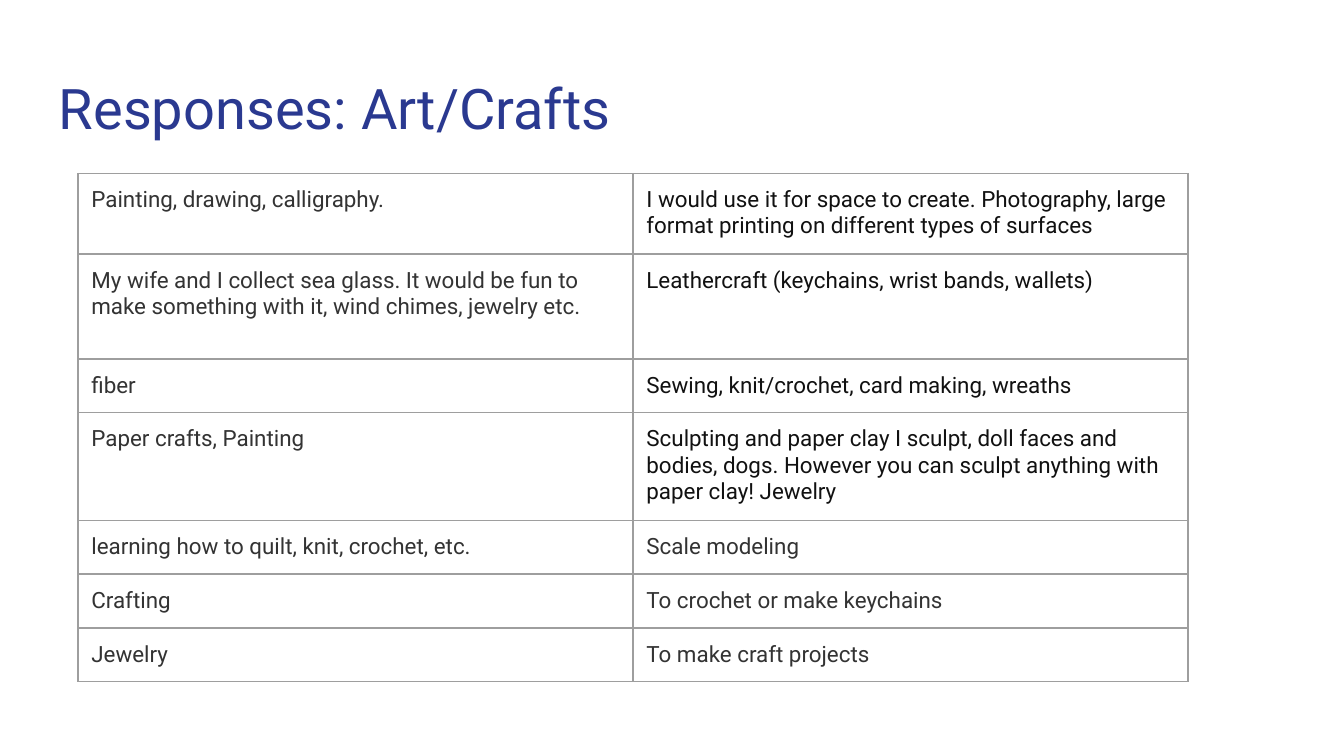
from dataclasses import dataclass
from lxml import etree
from pptx import Presentation
from pptx.dml.color import RGBColor as RGB
from pptx.enum.text import MSO_ANCHOR as Anchor
from pptx.oxml.ns import qn
from pptx.util import Inches, Pt


@dataclass
class Theme:
    font: str = "Roboto"
    title: str = "2A3990"
    gray: str = "333333"
    dark: str = "111111"
    line: str = "9E9E9E"
    paper: str = "FFFFFF"
    big: int = 30
    small: int = 12


theme = Theme()


def write(frame, text, size, color):
    para = frame.paragraphs[0]
    para.line_spacing = 1.0
    run = para.add_run()
    run.text = text
    run.font.name = theme.font
    run.font.size = Pt(size)
    run.font.color.rgb = RGB.from_string(color)
    return run


def border(cell):
    props = cell._tc.get_or_add_tcPr()
    for n, side in enumerate(("lnL", "lnR", "lnT", "lnB")):
        line = etree.Element(qn(f"a:{side}"), w=str(Pt(0.75)))
        fill = etree.SubElement(line, qn("a:solidFill"))
        etree.SubElement(fill, qn("a:srgbClr"), val=theme.line)
        props.insert(n, line)


deck = Presentation()
deck.slide_width = Inches(10)
deck.slide_height = Inches(10) * 9 // 16
slide = deck.slides.add_slide(deck.slide_layouts[6])
slide.background.fill.solid()
slide.background.fill.fore_color.rgb = RGB.from_string(theme.paper)

pad = Inches(0.1)
title = slide.shapes.add_textbox(Inches(0.34), Inches(0.45), Inches(9.32), Inches(0.66))
frame = title.text_frame
frame.word_wrap = True
frame.vertical_anchor = Anchor.TOP
frame.margin_left = frame.margin_right = frame.margin_top = frame.margin_bottom = pad
write(frame, "Responses: Art/Crafts", theme.big, theme.title)

rows = [
    ("Painting, drawing, calligraphy.",
     "I would use it for space to create. Photography, large format printing on different types of surfaces",
     theme.dark),
    ("My wife and I collect sea glass. It would be fun to make something with it, wind chimes, jewelry etc.",
     "Leathercraft (keychains, wrist bands, wallets)", theme.dark),
    ("fiber", "Sewing, knit/crochet, card making, wreaths", theme.dark),
    ("Paper crafts, Painting",
     "Sculpting and paper clay I sculpt, doll faces and bodies, dogs. "
     "However you can sculpt anything with paper clay! Jewelry", theme.dark),
    ("learning how to quilt, knit, crochet, etc.", "Scale modeling", theme.gray),
    ("Crafting", "To crochet or make keychains", theme.gray),
    ("Jewelry", "To make craft projects", theme.gray),
]

wide = Inches(4.13)
grid = slide.shapes.add_table(
    len(rows), 2, Inches(0.58), Inches(1.29), wide * 2, Inches(3.06)).table
grid.first_row = grid.horz_banding = False
for col in grid.columns:
    col.width = wide

for r, (left, right, tone) in enumerate(rows):
    grid.rows[r].height = Inches(0.78 if r == 1 else 0.38)
    for c, (text, color) in enumerate([(left, theme.gray), (right, tone)]):
        cell = grid.cell(r, c)
        cell.fill.background()
        cell.margin_left = cell.margin_right = cell.margin_top = cell.margin_bottom = pad
        border(cell)
        run = write(cell.text_frame, text, theme.small, color)
        mark = etree.Element(qn("a:highlight"))
        etree.SubElement(mark, qn("a:srgbClr"), val=theme.paper)
        run.font._element.find(qn("a:solidFill")).addnext(mark)

deck.save("out.pptx")
